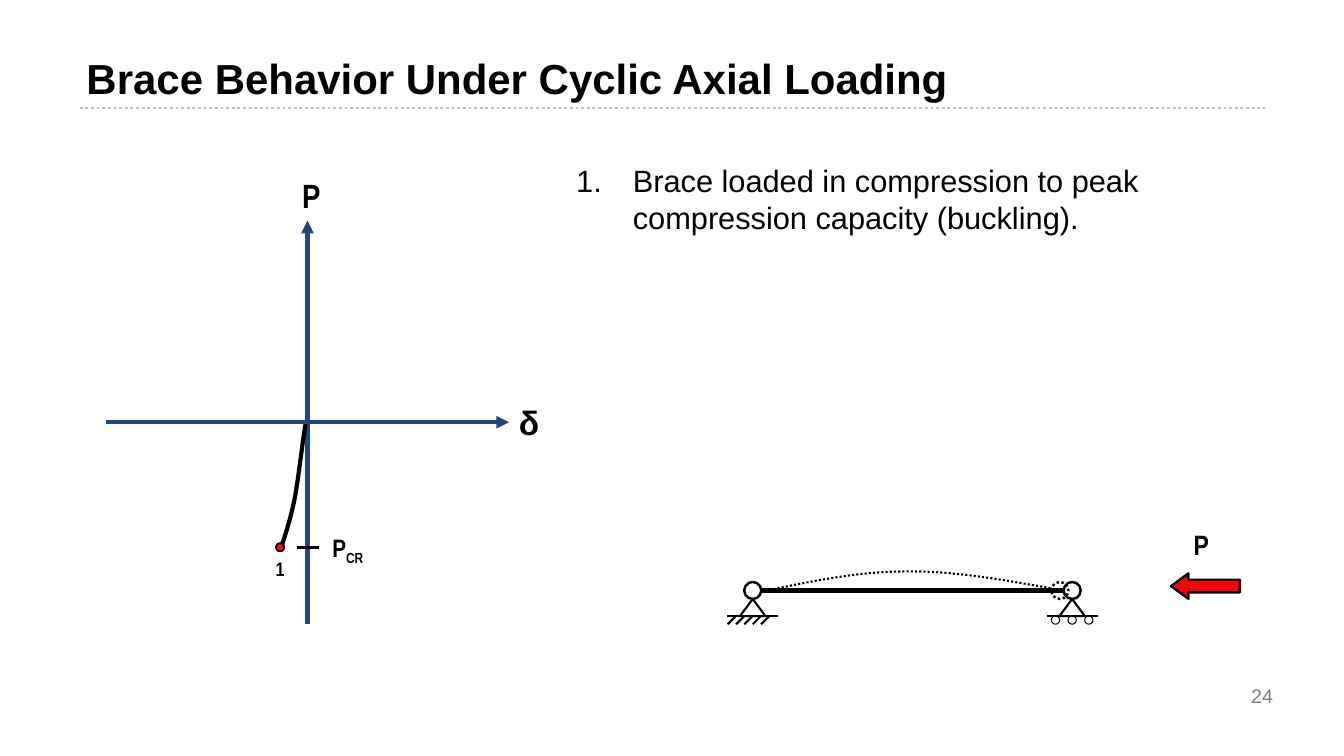
"""Build a slide on how a brace behaves under cyclic axial loading."""
from dataclasses import dataclass

from lxml import etree
from pptx import Presentation
from pptx import util as u
from pptx.dml.color import RGBColor
from pptx.enum import dml, shapes, text
from pptx.oxml import ns

KIND = shapes.MSO_SHAPE
LEFT, MID, RIGHT = text.PP_ALIGN.LEFT, text.PP_ALIGN.CENTER, text.PP_ALIGN.RIGHT


@dataclass(frozen=True)
class Theme:
    """Hold the colours, fonts and type sizes."""
    ink: str = "000000"
    axis: str = "1F497D"
    rule: str = "BFBFBF"
    grey: str = "7F7F7F"
    dot: str = "FC0128"
    load: str = "FF0000"
    font: str = "Arial"
    slim: str = "Arial Narrow"
    title: int = 30
    sign: int = 24
    body: int = 22
    force: int = 20
    mark: int = 18
    small: int = 14


T = Theme()


def child(node, tag, **attrs):
    """Add a drawing element to a node."""
    return etree.SubElement(node, ns.qn(tag), **attrs)


def stroke(line, width, color=T.ink, dots=False):
    """Style an outline."""
    line.color.rgb = RGBColor.from_string(color)
    line.width = u.Pt(width)
    if dots:
        line.dash_style = dml.MSO_LINE.ROUND_DOT


def add_line(slide, start, end, width, color=T.ink, dots=False, arrow=False):
    """Draw a straight line, with an arrowhead at its end if asked."""
    line = slide.shapes.add_connector(
        shapes.MSO_CONNECTOR.STRAIGHT, *(u.Cm(v) for v in (*start, *end)))
    stroke(line.line, width, color, dots)
    if arrow:
        child(line.line._get_or_add_ln(), "a:tailEnd", type="triangle")
    child(line._element.spPr, "a:effectLst")


def add_form(slide, kind, mid, size, width, fill=None, dots=False):
    """Draw a preset shape around a centre point."""
    (x, y), (w, h) = mid, size
    form = slide.shapes.add_shape(
        kind, u.Cm(x - w / 2), u.Cm(y - h / 2), u.Cm(w), u.Cm(h))
    form.shadow.inherit = False
    if fill:
        form.fill.solid()
        form.fill.fore_color.rgb = RGBColor.from_string(fill)
    else:
        form.fill.background()
    stroke(form.line, width, dots=dots)
    return form


def add_ring(slide, mid, size, width, **style):
    """Draw a circle around a centre point."""
    add_form(slide, KIND.OVAL, mid, (size, size), width, **style)


def add_curve(slide, knots, width, dots=False, steps=16):
    """Draw a chain of cubic curves through every third knot."""
    points = []
    for i in range(0, len(knots) - 1, 3):
        for n in range(1, steps + 1):
            t = n / steps
            parts = ((1 - t) ** 3, 3 * t * (1 - t) ** 2, 3 * t * t * (1 - t), t ** 3)
            points.append([u.Cm(sum(p * k[d] for p, k in zip(parts, knots[i:i + 4])))
                           for d in (0, 1)])
    path = slide.shapes.build_freeform(*(u.Cm(v) for v in knots[0]))
    path.add_line_segments(points, close=False)
    curve = path.convert_to_shape()
    curve.shadow.inherit = False
    curve.fill.background()
    stroke(curve.line, width, dots=dots)


def add_text(slide, words, box, size, font=T.font, bold=True, color=T.ink,
             align=MID, sub="", hang=0):
    """Place one paragraph, with a subscript or a hanging number if asked."""
    frame = slide.shapes.add_textbox(*(u.Cm(v) for v in box)).text_frame
    frame.word_wrap = True
    para = frame.paragraphs[0]
    para.alignment = align
    if hang:
        props = para._p.get_or_add_pPr()
        props.set("marL", str(u.Cm(hang)))
        props.set("indent", str(-u.Cm(hang)))
        child(props, "a:buFont", typeface="+mj-lt")
        child(props, "a:buAutoNum", type="arabicPeriod")
    para.font.name, para.font.size, para.font.bold = font, u.Pt(size), bold
    para.font.color.rgb = RGBColor.from_string(color)
    para.add_run().text = words
    if sub:
        low = para.add_run()
        low.text = sub
        low._r.get_or_add_rPr().set("baseline", "-25000")


def add_graph(slide):
    """Draw the force and displacement axes with the buckling path."""
    x, y, reach = 7.75, 10.64, 5.08
    add_line(slide, (x, y + reach), (x, y - reach), 3, T.axis, arrow=True)
    add_line(slide, (x - reach, y), (x + reach, y), 3, T.axis, arrow=True)
    add_text(slide, "P", (7.11, 4.29, 1.47, 1.27), T.sign, T.slim)
    add_text(slide, "δ", (12.6, 10.01, 1.47, 1.27), T.sign)
    add_line(slide, (7.49, 13.79), (8.03, 13.79), 2.25)
    add_text(slide, "P", (7.75, 13.28, 2.03, 1.02), T.mark, T.slim, sub="CR")
    add_curve(slide, [(7.7, 10.69), (7.59, 11.38), (7.52, 12.09), (7.42, 12.6),
                      (7.32, 13.08), (7.19, 13.49), (7.11, 13.72)], 3)
    add_ring(slide, (7.06, 13.79), 0.21, 1.25, fill=T.dot)
    add_text(slide, "1", (6.5, 13.92, 1.12, 0.84), T.small, T.slim)


def add_base(slide, x, y, ground):
    """Draw a hinge on a support, with its ground line."""
    add_ring(slide, (x, y), 0.43, 1.75)
    add_form(slide, KIND.ISOSCELES_TRIANGLE, (x, y + 0.43), (0.64, 0.43), 1.5)
    add_line(slide, (x - 0.64, ground), (x + 0.64, ground), 1.5)


def add_brace(slide):
    """Draw the pinned brace, its buckled form and the load."""
    pin, roll, y, ground, step = 18.97, 27.02, 14.88, 15.52, 0.21
    for x in (pin, roll):
        add_base(slide, x, y, ground)
    for i in range(5):
        top = pin + (i - 2) * step
        add_line(slide, (top, ground), (top - step, ground + step), 1.5)
    for i in (-1, 0, 1):
        add_ring(slide, (roll + 2 * i * step, ground + step / 2), step, 0.75)
    add_line(slide, (pin + step, y), (roll - step, y), 3)
    add_ring(slide, (26.71, y), 0.43, 1.75, dots=True)
    add_curve(slide, [(19.18, 14.91), (20.4, 14.66), (21.59, 14.4), (22.81, 14.4),
                      (24.03, 14.38), (25.27, 14.61), (26.52, 14.83)], 1.5, dots=True)
    arrow = add_form(slide, KIND.LEFT_ARROW, (30.38, 14.77), (1.73, 0.64), 1.75, T.load)
    arrow.adjustments[1] = 0.68
    add_text(slide, "P", (29.31, 13.18, 1.93, 1.09), T.force, T.slim)


def main():
    """Build and save the slide."""
    deck = Presentation()
    deck.slide_width, deck.slide_height = u.Cm(33.87), u.Cm(19.05)
    slide = deck.slides.add_slide(deck.slide_layouts[6])
    add_line(slide, (2.01, 2.72), (31.88, 2.72), 2, T.rule, dots=True)
    add_text(slide, "Brace Behavior Under Cyclic Axial Loading",
             (1.93, 1.19, 30.4, 1.73), T.title, align=LEFT)
    add_text(slide, "Brace loaded in compression to peak compression capacity (buckling).",
             (14.27, 3.96, 18.06, 15.09), T.body, bold=False, align=LEFT, hang=1.43)
    add_graph(slide)
    add_brace(slide)
    add_text(slide, "24", (24.43, 17.12, 7.9, 1.02), T.small, bold=False,
             color=T.grey, align=RIGHT)
    deck.save("out.pptx")


if __name__ == "__main__":
    main()
